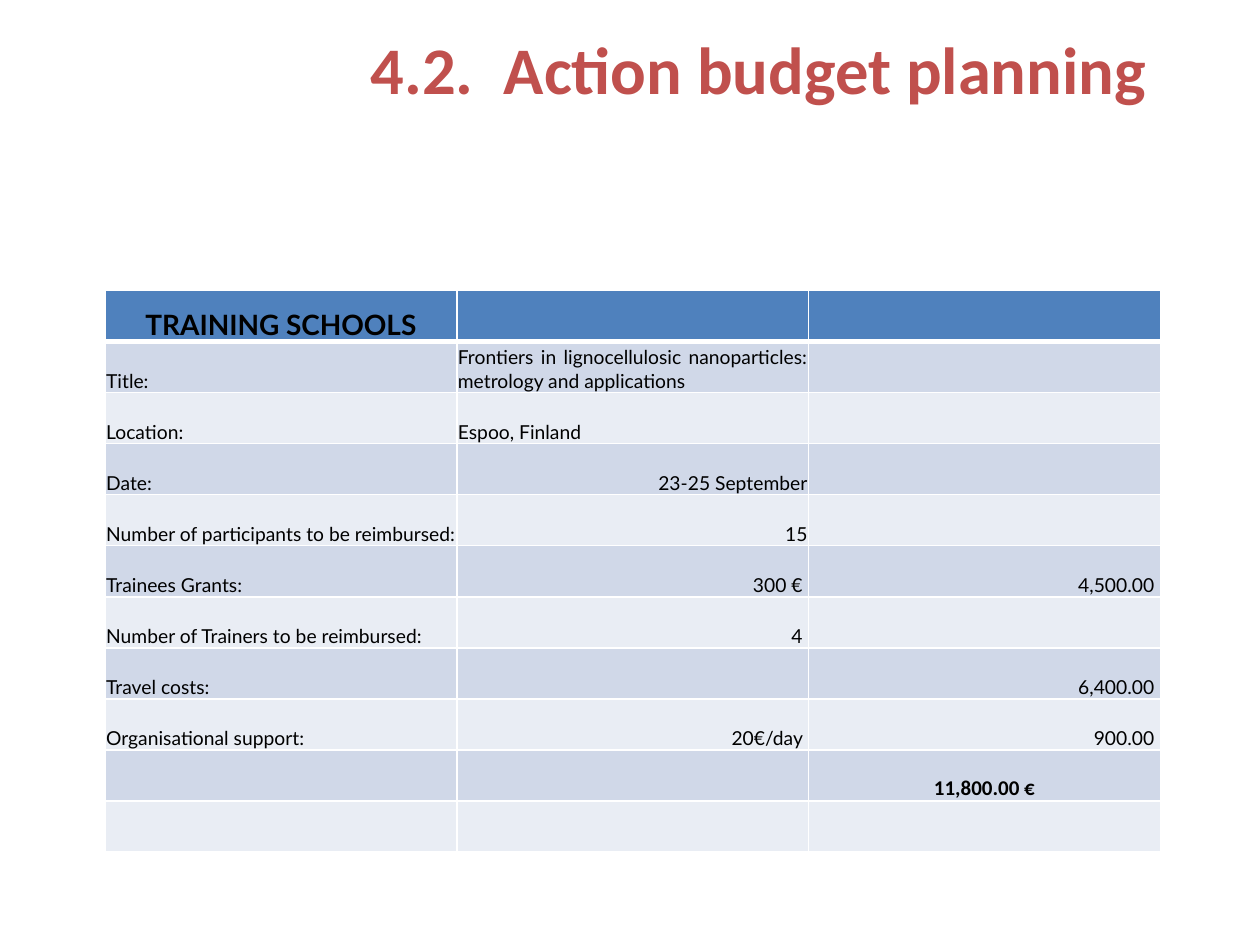
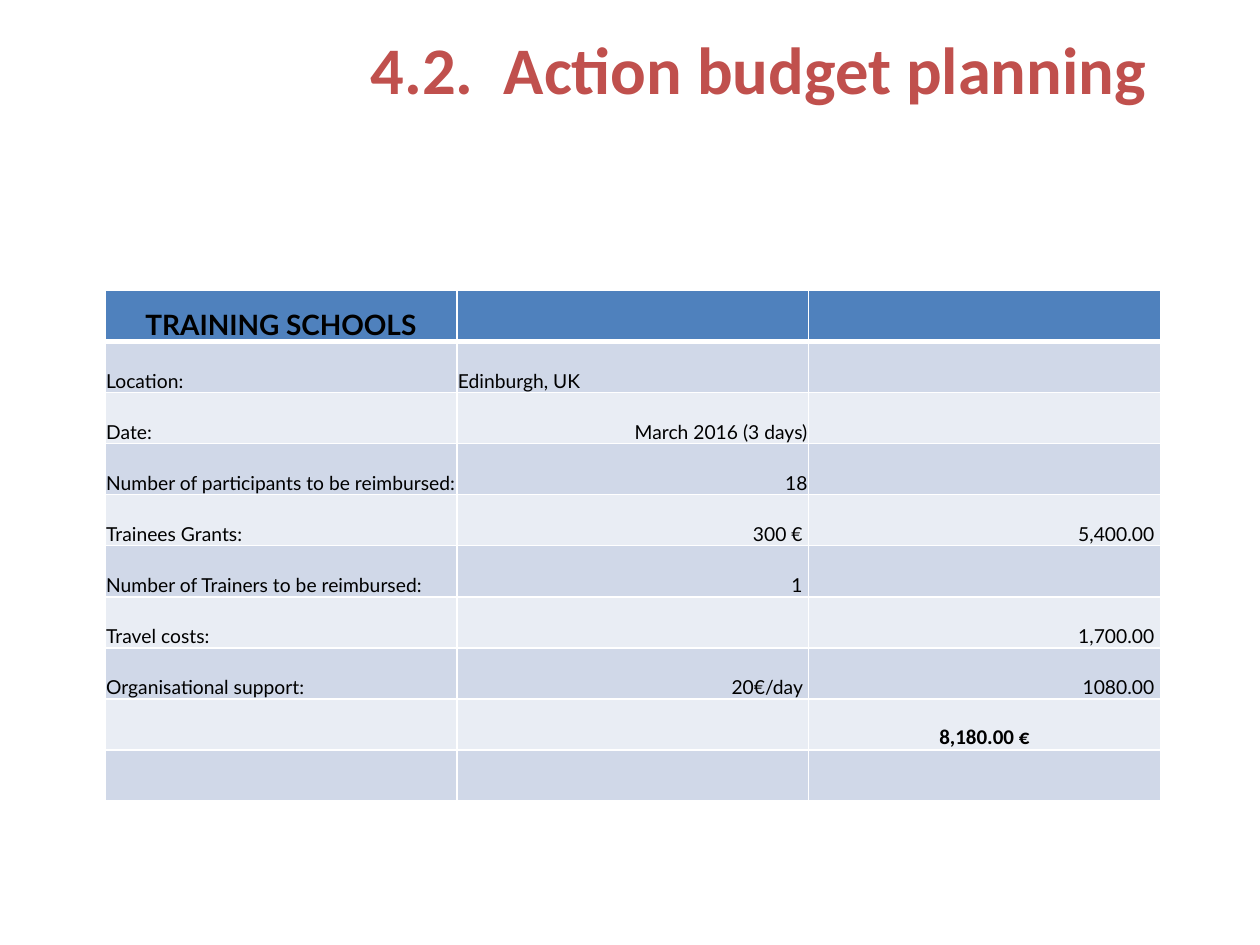
from lxml.etree import SubElement
from pptx import Presentation
from pptx.dml.color import RGBColor
from pptx.enum.text import MSO_ANCHOR, PP_ALIGN
from pptx.oxml.ns import qn
from pptx.util import Cm, Pt

TITLE_RED = "C0504D"
HEADER_BLUE = "4F81BD"
BANDS = ["E9EDF4", "D0D8E8"]
RULE_WHITE = "FFFFFF"
BLACK = "000000"

COLUMN_WIDTH, ROW_HEIGHT = 7.09, 1.03
CELL_INSET = 0.02


def color(hex_code):
    return RGBColor.from_string(hex_code)


def write(frame, text, size=11, font="Lato", fill=BLACK, bold=False, align=PP_ALIGN.LEFT):
    paragraph = frame.paragraphs[0]
    paragraph.alignment = align
    run = paragraph.add_run()
    run.text = text
    run.font.size = Pt(size)
    run.font.name = font
    run.font.bold = bold
    run.font.color.rgb = color(fill)


# Budget of each training school: label, detail, amount
frontiers_school = [
    ("Title:", "Frontiers in lignocellulosic nanoparticles: metrology and applications", ""),
    ("Location:", "Espoo, Finland", ""),
    ("Date:", "23-25 September", ""),
    ("Number of participants to be reimbursed:", "15", ""),
    ("Trainees Grants:", "300 € ", "4,500.00 "),
    ("Number of Trainers to be reimbursed:", "4 ", ""),
    ("Travel costs:", "", "6,400.00 "),
    ("Organisational support:", "20€/day ", "900.00 "),
    ("", "", "11,800.00 €"),
]
edinburgh_school = [
    ("Location:", "Edinburgh, UK", ""),
    ("Date:", "March 2016 (3 days)", ""),
    ("Number of participants to be reimbursed:", "18", ""),
    ("Trainees Grants:", "300 € ", "5,400.00 "),
    ("Number of Trainers to be reimbursed:", "1 ", ""),
    ("Travel costs:", "", "1,700.00 "),
    ("Organisational support:", "20€/day ", "1080.00 "),
    ("", "", "8,180.00 €"),
]
# Details are right-aligned unless listed here
detail_align = {"Title:": PP_ALIGN.JUSTIFY, "Location:": PP_ALIGN.LEFT}

prs = Presentation()
prs.slide_width, prs.slide_height = Cm(25.4), Cm(19.05)

for school in (frontiers_school, edinburgh_school):
    slide = prs.slides.add_slide(prs.slide_layouts[6])

    # Budget table: header, school rows, empty closing row
    rows = [("TRAINING SCHOOLS", "", "")] + school + [("", "", "")]
    budget = slide.shapes.add_table(
        len(rows), 3, Cm(2.12), Cm(5.85),
        Cm(3 * COLUMN_WIDTH), Cm(len(rows) * ROW_HEIGHT)).table
    for column in budget.columns:
        column.width = Cm(COLUMN_WIDTH)

    for r, row in enumerate(rows):
        budget.rows[r].height = Cm(ROW_HEIGHT)
        label = row[0]
        for c, text in enumerate(row):
            cell = budget.cell(r, c)
            cell.vertical_anchor = MSO_ANCHOR.BOTTOM
            cell.margin_left = cell.margin_right = cell.margin_top = Cm(CELL_INSET)
            cell.margin_bottom = 0

            # White rules, thicker under the header
            thick_side = {0: "a:lnB", 1: "a:lnT"}.get(r)
            for side in ("a:lnL", "a:lnR", "a:lnT", "a:lnB"):
                width = Pt(3 if side == thick_side else 1)
                rule = SubElement(cell._tc.get_or_add_tcPr(), qn(side), w=str(width))
                rule_fill = SubElement(rule, qn("a:solidFill"))
                SubElement(rule_fill, qn("a:srgbClr"), val=RULE_WHITE)
            cell.fill.solid()
            cell.fill.fore_color.rgb = color(HEADER_BLUE if r == 0 else BANDS[r % 2])

            if not text:
                continue
            if r == 0:
                write(cell.text_frame, text, size=16, bold=True, align=PP_ALIGN.CENTER)
            elif not label:
                write(cell.text_frame, text, size=12, font="Calibri", bold=True,
                      align=PP_ALIGN.CENTER)
            elif c == 0:
                write(cell.text_frame, text)
            else:
                write(cell.text_frame, text, align=detail_align.get(label, PP_ALIGN.RIGHT))

    # Slide title
    heading = slide.shapes.add_textbox(Cm(4.65), Cm(0.43), Cm(18.72), Cm(1.88)).text_frame
    heading.word_wrap = True
    write(heading, "4.2.  Action budget planning", size=38, font="Calibri",
          fill=TITLE_RED, bold=True, align=PP_ALIGN.RIGHT)

prs.save("out.pptx")
